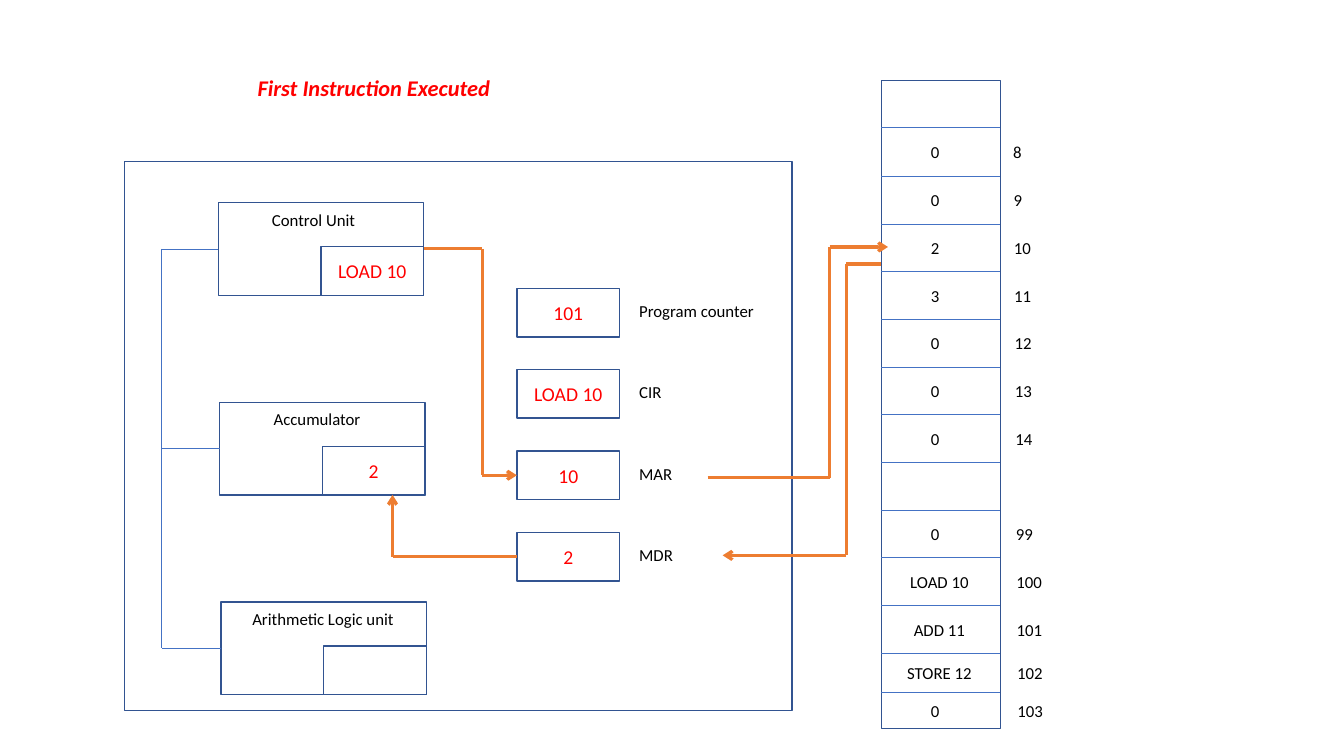
from pptx import Presentation
from pptx.dml.color import RGBColor
from pptx.enum.shapes import MSO_CONNECTOR, MSO_SHAPE
from pptx.enum.text import MSO_ANCHOR, PP_ALIGN
from pptx.oxml.ns import qn
from pptx.util import Pt
from lxml import etree

RECT, STRAIGHT = MSO_SHAPE.RECTANGLE, MSO_CONNECTOR.STRAIGHT
LEFT, CENTER, MIDDLE = PP_ALIGN.LEFT, PP_ALIGN.CENTER, MSO_ANCHOR.MIDDLE
SIDE_LEFT, SIDE_RIGHT = 1, 3

THEME = {
    "box": {"color": RGBColor(0x32, 0x54, 0x91), "width": 1},
    "thin": {"color": RGBColor(0x44, 0x72, 0xC4), "width": 0.5},
    "flow": {"color": RGBColor(0xED, 0x7D, 0x31), "width": 2.25},
    "label": {"color": RGBColor(0, 0, 0), "font": {"name": "Calibri", "size": Pt(12)}},
    "value": {"color": RGBColor(0xFF, 0, 0), "font": {"name": "Calibri", "size": Pt(14)}},
    "title": {"color": RGBColor(0xFF, 0, 0),
              "font": {"name": "Calibri", "size": Pt(16), "bold": True, "italic": True}},
}

prs = Presentation()
prs.slide_width, prs.slide_height = Pt(960), Pt(540)
s = prs.slides.add_slide(prs.slide_layouts[6])


def add_box(x, y, w, h, text="", style="label", align=CENTER, outline=True):
    """Add an outlined rectangle or a bare text box, with optional text."""
    area = [Pt(v) for v in (x, y, w, h)]
    if outline:
        sp = s.shapes.add_shape(RECT, *area)
        sp.shadow.inherit = False
        sp.fill.background()
        sp.line.color.rgb = THEME["box"]["color"]
        sp.line.width = Pt(THEME["box"]["width"])
    else:
        sp = s.shapes.add_textbox(*area)
    if text:
        tf = sp.text_frame
        tf.word_wrap, tf.vertical_anchor = True, MIDDLE
        p = tf.paragraphs[0]
        p.alignment = align
        r = p.add_run()
        r.text = text
        for name, value in THEME[style]["font"].items():
            setattr(r.font, name, value)
        r.font.color.rgb = THEME[style]["color"]
    return sp


def add_path(points, style, arrow=False, start=None, end=None):
    """Draw straight segments through points; join the ends to (shape, side)."""
    last = len(points) - 2
    for i, (a, b) in enumerate(zip(points, points[1:])):
        c = s.shapes.add_connector(STRAIGHT, *[Pt(v) for v in (*a, *b)])
        c.line.color.rgb = THEME[style]["color"]
        c.line.width = Pt(THEME[style]["width"])
        if start and i == 0:
            c.begin_connect(*start)
        if end and i == last:
            c.end_connect(*end)
        if arrow and i == last:
            etree.SubElement(c.line._get_or_add_ln(), qn("a:tailEnd"), type="arrow")
        etree.SubElement(c._element.spPr, qn("a:effectLst"))


# Title and processor outline
add_box(177, 49, 236, 27, "First Instruction Executed", "title", LEFT, outline=False)
add_box(88.9, 115.5, 476.9, 391.9)

# Processor units, each with an inner register, joined to a common bus
CELL_W, CELL_H = 73.4, 34.6
UNIT_W, UNIT_H, UNIT_TOP, UNIT_STEP = 146.6, 66.2, 144.7, 142.6
BUS_X = 115.6
unit_mid = [UNIT_TOP + i * UNIT_STEP + UNIT_H / 2 for i in range(3)]
units = []
for i, (name, value, center) in enumerate([
        ("Control Unit", "LOAD 10", 224),
        ("Accumulator", "2", 226.5),
        ("Arithmetic Logic unit", "", 230.8)]):
    x, y = 156 + i, UNIT_TOP + i * UNIT_STEP
    unit = add_box(x, y, UNIT_W, UNIT_H)
    add_box(x + UNIT_W - CELL_W, y + UNIT_H - CELL_H, CELL_W, CELL_H, value, "value")
    add_box(center - 65, y + 1, 130, 22, name, outline=False)
    add_path([(BUS_X, unit_mid[i]), (x, unit_mid[i])], "thin", end=(unit, SIDE_LEFT))
    units.append(unit)
add_path([(BUS_X, unit_mid[0]), (BUS_X, unit_mid[-1])], "thin")

# Special registers
REG_X, REG_TOP, REG_STEP = 369.2, 206, 58.1
registers = {}
for i, (name, value) in enumerate([
        ("Program counter", "101"), ("CIR", "LOAD 10"), ("MAR", "10"), ("MDR", "2")]):
    y = REG_TOP + i * REG_STEP
    registers[name] = add_box(REG_X, y, CELL_W, CELL_H, value, "value")
    add_box(449.5, y + 5, 98.6, 22, name, align=LEFT, outline=False)
mar_y, mdr_y = [REG_TOP + i * REG_STEP + CELL_H / 2 for i in (2, 3)]

# Memory column: cell contents with their addresses
MEM_X, MEM_W, MEM_TOP, MEM_BOTTOM = 629.5, 85, 57.6, 520.6
memory = [("", ""), ("0", "8"), ("0", "9"), ("2", "10"), ("3", "11"), ("0", "12"),
          ("0", "13"), ("0", "14"), ("", ""), ("0", "99"), ("LOAD 10", "100"),
          ("ADD 11", "101"), ("STORE 12", "102"), ("0", "103")]
dividers = [90.7] + [126 + 34.06 * i for i in range(11)] + [494.6]
edges = [MEM_TOP, *dividers, MEM_BOTTOM]
add_box(MEM_X, MEM_TOP, MEM_W, MEM_BOTTOM - MEM_TOP)
for y in dividers:
    add_path([(MEM_X, y), (MEM_X + MEM_W, y)], "thin")
for i, (value, address) in enumerate(memory):
    if address:
        y = (edges[i] + edges[i + 1]) / 2 - 11
        center = 668 if len(value) == 1 else 671
        add_box(center - 37, y, 74, 22, value, outline=False)
        add_box(716.4 + 0.25 * i, y, 39, 22, address, align=LEFT, outline=False)

# Data flow of the instruction
unit_right = 156 + UNIT_W
add_path([(unit_right, unit_mid[0]), (344.5, unit_mid[0]), (344.5, mar_y), (REG_X, mar_y)],
         "flow", True, (units[0], SIDE_RIGHT), (registers["MAR"], SIDE_LEFT))
add_path([(505.5, 341.2), (592.6, 341.2), (592.6, 176.4), (634.3, 176.4)], "flow", True)
add_path([(MEM_X, 188.6), (604.4, 188.6), (604.4, 396.7), (516.2, 396.7)], "flow", True)
add_path([(REG_X, mdr_y), (280.4, mdr_y), (280.4, UNIT_TOP + UNIT_STEP + UNIT_H)],
         "flow", True, (registers["MDR"], SIDE_LEFT))

prs.save("out.pptx")
